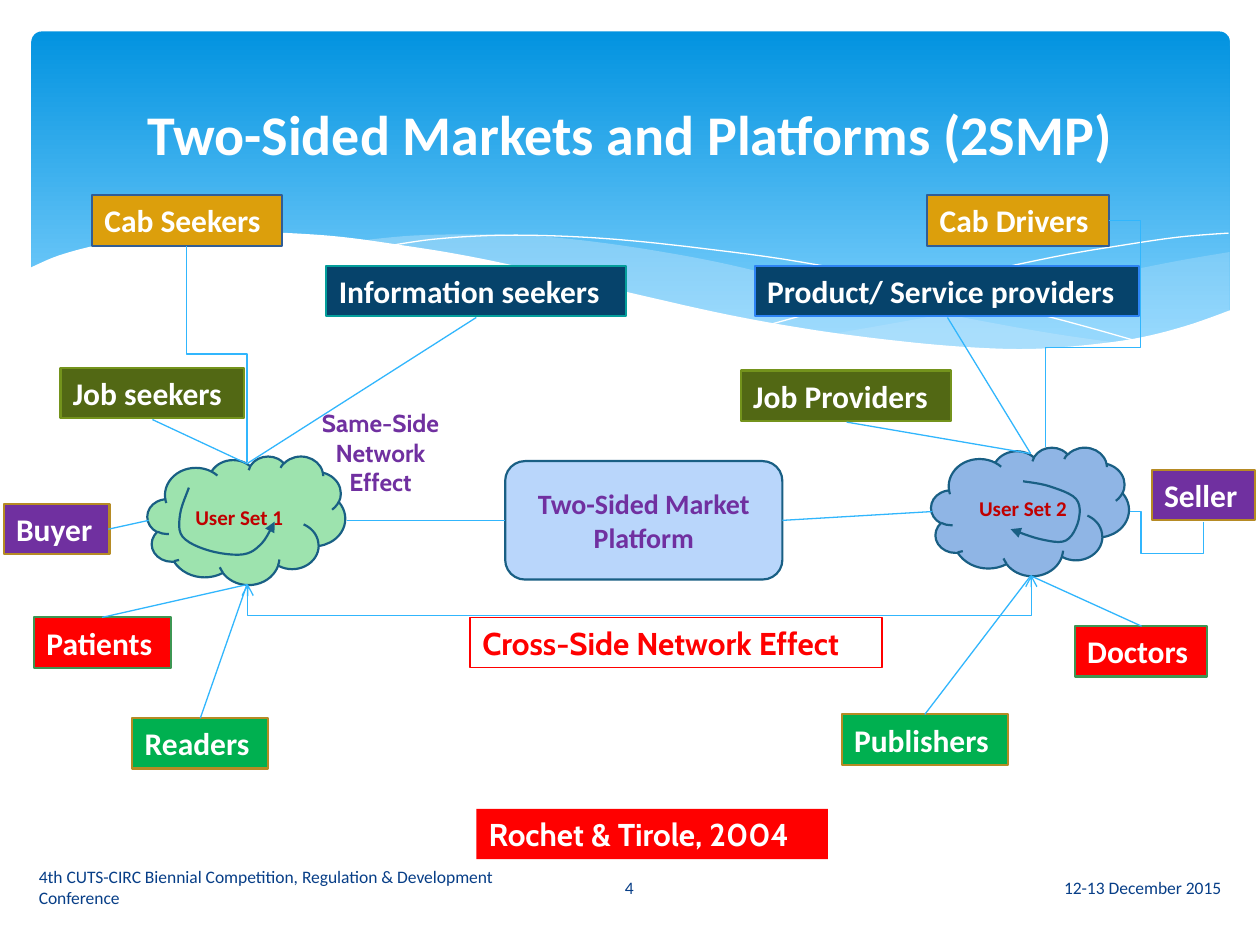
import pptx
import pptx.dml.color
import pptx.enum.shapes
import pptx.enum.text
import pptx.oxml
import pptx.oxml.ns
import pptx.util

SHAPE = pptx.enum.shapes.MSO_SHAPE
LINK = pptx.enum.shapes.MSO_CONNECTOR
ALIGN = pptx.enum.text.PP_ALIGN
ANCHOR = pptx.enum.text.MSO_ANCHOR
Pt = pptx.util.Pt

HUES = {
    "white": "FFFFFF", "deep": "0293E0", "light": "83D3FE", "mist": "C6E7FC",
    "navy": "073E87", "edge": "195F84", "link": "31B6FD", "hub": "B9D6FB",
    "mint": "9DE3AE", "blue": "8FB5E5", "plum": "7030A0", "wine": "C00000",
    "red": "FF0000", "gold": "DC9F0C", "slate": "315D95", "fern": "3D9653",
    "olive": "526814", "moss": "74931C", "green": "00B050", "sand": "B68B24",
    "ink": "06436B", "teal": "049E9B", "azure": "2D83F4",
}

LABELS = [
    ("Cab Seekers", 0.73, 1.55, 1.51, "gold", "slate"),
    ("Cab Drivers", 7.36, 1.55, 1.44, "gold", "slate"),
    ("Patients", 0.27, 4.9, 1.09, "red", "fern"),
    ("Doctors", 8.53, 4.97, 1.05, "red", "fern"),
    ("Job seekers", 0.48, 2.92, 1.46, "olive", "moss"),
    ("Job Providers", 5.88, 2.94, 1.67, "olive", "moss"),
    ("Publishers", 6.68, 5.67, 1.32, "green", "sand"),
    ("Readers", 1.05, 5.7, 1.08, "green", "sand"),
    ("Information seekers", 2.59, 2.11, 2.38, "ink", "teal"),
    ("Product/ Service providers", 5.99, 2.11, 3.05, "ink", "azure"),
    ("Buyer", 0.03, 4, 0.84, "plum", "sand"),
    ("Seller", 9.14, 3.73, 0.82, "plum", "sand"),
]

LINES = [
    (2.75, 4.13, 4.01, 4.13), (7.4, 4.06, 6.21, 4.13),
    (1.96, 3.68, 1.21, 3.33), (1.96, 3.68, 3.78, 2.52),
    (1.96, 4.64, 0.81, 4.9), (1.96, 4.64, 1.59, 5.7),
    (8.18, 3.6, 7.52, 2.52), (8.18, 3.6, 6.72, 3.35),
    (8.18, 4.57, 7.34, 5.67), (8.18, 4.57, 9.06, 4.97),
    (0.86, 4.2, 1.18, 4.13),
]

BENDS = [
    ((0.86, 2.57, 1.72, 0.48), 270, "V", [0.5]),
    ((7.65, 2.4, 1.8, 0.5), 90, "HV", [0.44, 1.5]),
    ((9.22, 3.81, 0.08, 0.58), 90, "H", [-3.14, 0.85]),
]

RIGHT = [(9.76, 2), (9.35, 2.07), (8.91, 2.16), (8.32, 2.3), (7.79, 2.43),
         (7.29, 2.53), (6.61, 2.65)]
RIM = [(6.61, 2.65), (7.05, 2.71), (7.45, 2.75), (8.03, 2.78), (8.54, 2.76),
       (8.97, 2.7), (9.35, 2.62), (9.76, 2.47)]
CREST = [(8.93, 2.73), (8.37, 2.65), (7.75, 2.54), (7.06, 2.4), (6.29, 2.22),
         (5.69, 2.08), (5.14, 1.98), (4.64, 1.91), (4.2, 1.87), (3.8, 1.86),
         (3.28, 1.87), (2.86, 1.91)]
TROUGH = [(2.86, 1.91), (3.42, 1.99), (4.04, 2.11), (4.91, 2.32), (5.66, 2.48),
          (6.34, 2.61), (6.95, 2.7), (7.48, 2.76), (8.07, 2.79), (8.57, 2.77),
          (8.93, 2.73)]
ARCH = [(3.09, 1.95), (3.43, 1.9), (3.87, 1.87), (4.33, 1.87), (4.89, 1.9),
        (5.56, 1.97), (6.36, 2.08), (7.27, 2.26), (8.31, 2.51), (9.07, 2.72)]
SWEEP = [(6.13, 2.57), (6.72, 2.41), (7.48, 2.23), (8.36, 2.04), (8.95, 1.94),
         (9.37, 1.88), (9.75, 1.85)]
SWELL = [(9.77, 2.46), (9.4, 2.59), (8.99, 2.69), (8.5, 2.75), (8.09, 2.77),
         (7.61, 2.75), (7.08, 2.7), (6.47, 2.62), (5.79, 2.5), (5.03, 2.33),
         (4.18, 2.13), (3.65, 2.02), (3.15, 1.94), (2.71, 1.88), (2.3, 1.85),
         (1.93, 1.84), (1.46, 1.85), (1.06, 1.89), (0.75, 1.95), (0.46, 2.03),
         (0.23, 2.13)]
TURNS = [
    [(8.12, 3.82), (8.33, 3.86), (8.54, 3.96), (8.56, 4.13), (8.46, 4.29),
     (8.26, 4.28), (8.02, 4.2)],
    [(1.5, 3.87), (1.43, 4.08), (1.45, 4.26), (1.66, 4.37), (1.93, 4.4),
     (2.08, 4.31), (2.18, 4.14)],
]


def size(inch):
    return pptx.util.Cm(inch * 2.54)


def hue(name):
    return pptx.dml.color.RGBColor.from_string(HUES[name])


def add(parent, tag, **attrs):
    node = pptx.oxml.parse_xml(f"<{tag} {pptx.oxml.ns.nsdecls('a')}/>")
    for key, value in attrs.items():
        node.set(key, str(value))
    parent.append(node)
    return node


def style(shape, fill=None, edge=None, width=1.25):
    shape.shadow.inherit = False
    if fill:
        shape.fill.solid()
        shape.fill.fore_color.rgb = hue(fill)
    else:
        shape.fill.background()
    if edge:
        shape.line.color.rgb = hue(edge)
        shape.line.width = Pt(width)
    else:
        shape.line.fill.background()


def write(shape, text, points, color, font="Calibri", bold=True,
          align=ALIGN.LEFT, anchor=ANCHOR.MIDDLE):
    frame = shape.text_frame
    frame.text = text
    frame.word_wrap = True
    frame.vertical_anchor = anchor
    para = frame.paragraphs[0]
    para.alignment = align
    face = para.runs[0].font
    face.name, face.size, face.bold = font, Pt(points), bold
    face.color.rgb = hue(color)


def block(slide, kind, box, fill=None, edge=None, width=1.25):
    shape = slide.shapes.add_shape(kind, *map(size, box))
    style(shape, fill, edge, width)
    return shape


def note(slide, box, *args, **kinds):
    write(slide.shapes.add_textbox(*map(size, box)), *args, **kinds)


def smooth(points, steps=6):
    ends = [points[0], *points, points[-1]]
    path = [points[0]]
    for a, b, c, d in zip(ends, ends[1:], ends[2:], ends[3:]):
        for step in range(1, steps + 1):
            t = step / steps
            path.append(tuple(
                (2 * q + (r - p) * t + (2 * p - 5 * q + 4 * r - s) * t ** 2
                 + (3 * q - p - 3 * r + s) * t ** 3) / 2
                for p, q, r, s in zip(a, b, c, d)))
    return path


def trace(slide, points, fill=None, edge=None, width=1.25, alpha=None):
    path = [(size(x), size(y)) for x, y in points]
    pen = slide.shapes.build_freeform(*path[0], scale=1.0)
    pen.add_line_segments(path[1:], close=bool(fill))
    shape = pen.convert_to_shape()
    style(shape, fill, edge, width)
    if alpha:
        tint = shape.fill._xPr.find(".//" + pptx.oxml.ns.qn("a:srgbClr"))
        add(tint, "a:alpha", val=alpha * 1000)
    return shape


def join(slide, ends, kind=LINK.STRAIGHT):
    line = slide.shapes.add_connector(kind, *map(size, ends))
    line.line.color.rgb = hue("link")
    line.line.width = Pt(0.75)
    add(line._element.spPr, "a:effectLst")
    return line


def bend(slide, box, turn, flips, folds):
    x, y, w, h = box
    line = join(slide, (x, y, x + w, y + h), LINK.ELBOW)
    props = line._element.spPr
    frame = props.find(pptx.oxml.ns.qn("a:xfrm"))
    frame.set("rot", str(turn * 60000))
    for flip in flips:
        frame.set("flip" + flip, "1")
    shape = props.find(pptx.oxml.ns.qn("a:prstGeom"))
    shape.set("prst", f"bentConnector{len(folds) + 2}")
    for old in list(shape):
        shape.remove(old)
    guides = add(shape, "a:avLst")
    for num, fold in enumerate(folds, 1):
        add(guides, "a:gd", name=f"adj{num}", fmla=f"val {round(fold * 100000)}")
    return line


def header(slide):
    band = block(slide, SHAPE.ROUNDED_RECTANGLE, (0.25, 0.25, 9.51, 2.7))
    band.adjustments[0] = 0.03
    band.fill.gradient()
    band.fill.gradient_angle = 270
    for stop, name, spot in zip(band.fill.gradient_stops, ("deep", "light"), (0, 0.9)):
        stop.color.rgb = hue(name)
        stop.position = spot
    trace(slide, smooth(RIGHT) + smooth(RIM), "mist", alpha=29)
    trace(slide, smooth(CREST) + smooth(TROUGH), "mist", alpha=40)
    for points in (ARCH, SWEEP):
        trace(slide, smooth(points), edge="white", width=0)
    trace(slide, smooth(SWELL) + [(0.23, 3.29), (9.77, 3.29)], "white")


def main():
    deck = pptx.Presentation()
    deck.slide_width, deck.slide_height = size(10), size(7.5)
    slide = deck.slides.add_slide(deck.slide_layouts[6])
    header(slide)
    note(slide, (0.5, 0.37, 9, 1.37), "Two-Sided Markets and Platforms (2SMP)",
         32, "white", align=ALIGN.CENTER)
    for x, w, text, align in (
            (5.65, 4.14, "12-13 December 2015", ALIGN.RIGHT),
            (0.21, 4.14, "4th CUTS-CIRC Biennial Competition, Regulation & "
             "Development Conference", ALIGN.LEFT),
            (4.36, 1.27, "4", ALIGN.CENTER)):
        note(slide, (x, 6.84, w, 0.4), text, 10, "navy", bold=False, align=align)

    hub = block(slide, SHAPE.ROUNDED_RECTANGLE, (4.01, 3.66, 2.2, 0.94), "hub", "edge")
    write(hub, "Two-Sided Market Platform", 16, "plum", align=ALIGN.CENTER)
    for x, y, fill, text in ((1.17, 3.62, "mint", "User Set 1"),
                             (7.39, 3.55, "blue", "User Set 2")):
        cloud = block(slide, SHAPE.CLOUD, (x, y, 1.57, 1.02), fill, "edge")
        write(cloud, text, 12, "wine", align=ALIGN.CENTER)

    cross = bend(slide, (5.04, 1.49, 0.07, 6.22), 90, "HV", [-3.54])
    for tag in ("a:headEnd", "a:tailEnd"):
        add(cross.line._get_or_add_ln(), tag, type="arrow")
    for points in TURNS:
        turn = trace(slide, smooth(points), edge="edge")
        add(turn.line._get_or_add_ln(), "a:tailEnd", type="triangle")

    effect = block(slide, SHAPE.RECTANGLE, (3.73, 4.9, 3.27, 0.4), None, "red", 0.75)
    write(effect, "Cross-Side Network Effect", 18, "red", "Cabin", anchor=ANCHOR.TOP)
    for text, x, y, w, fill, edge in LABELS:
        label = block(slide, SHAPE.RECTANGLE, (x, y, w, 0.4), fill, edge)
        write(label, text, 18, "white", anchor=ANCHOR.TOP)
    for ends in LINES:
        join(slide, ends)
    for parts in BENDS:
        bend(slide, *parts)

    note(slide, (2.31, 3.19, 1.42, 0.81), "Same-Side Network Effect", 14, "plum",
         "Cabin", align=ALIGN.CENTER, anchor=ANCHOR.TOP)
    cite = block(slide, SHAPE.RECTANGLE, (3.78, 6.42, 2.79, 0.4), "red")
    write(cite, "Rochet & Tirole, 2004", 18, "white", "Cabin", anchor=ANCHOR.TOP)
    deck.save("out.pptx")


if __name__ == "__main__":
    main()
